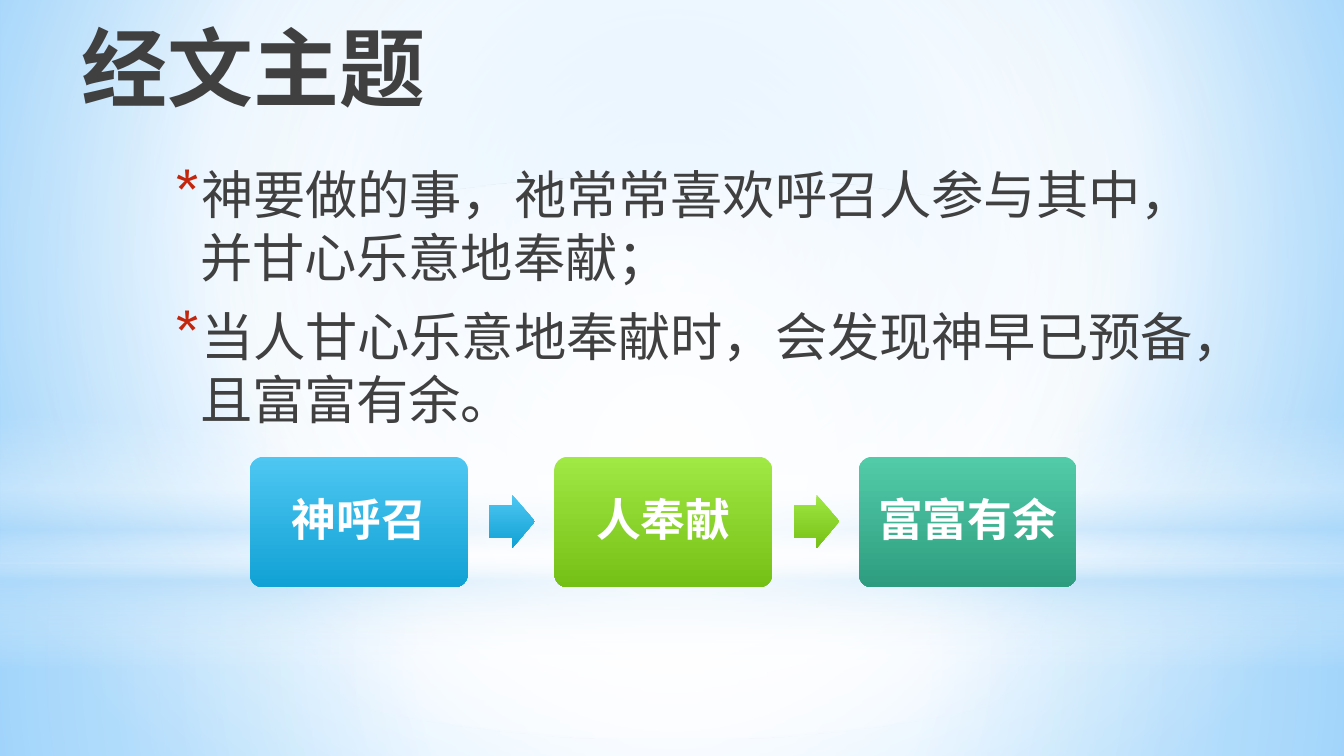
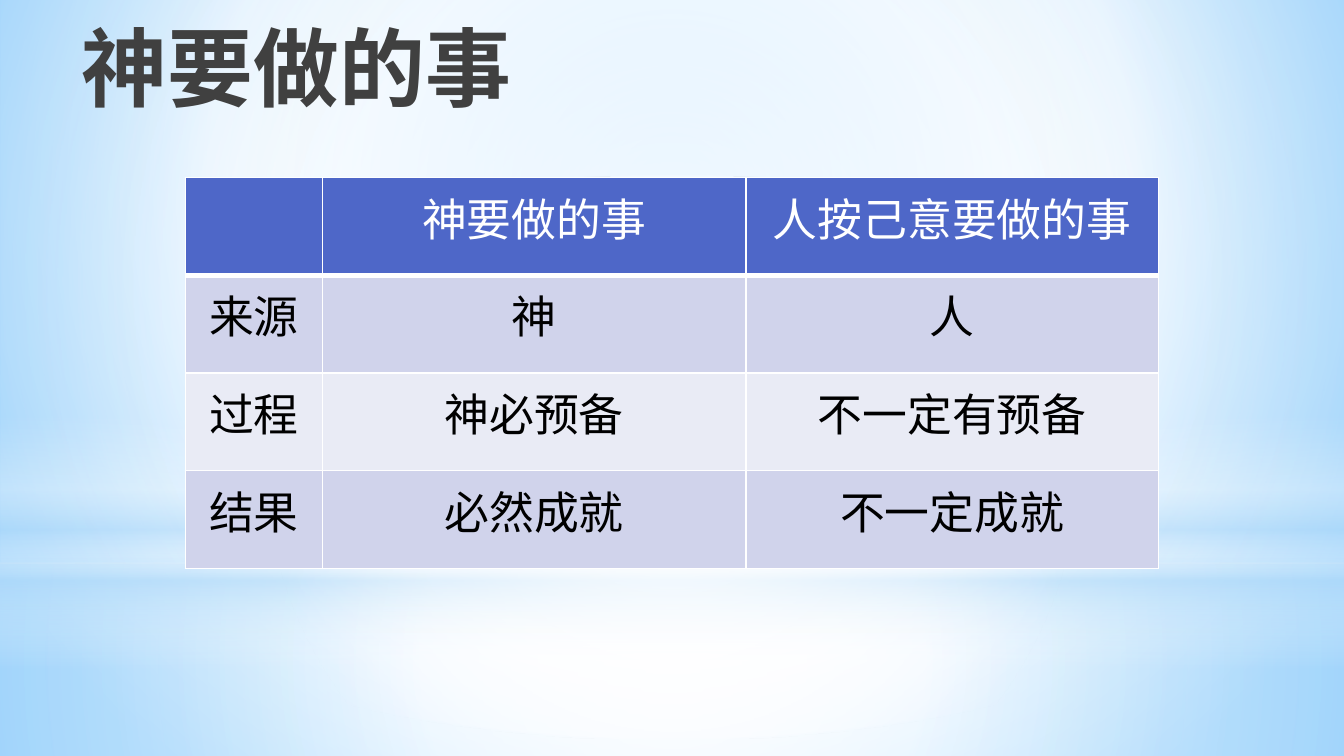
from dataclasses import dataclass

from lxml import etree
from pptx import Presentation
from pptx.dml.color import RGBColor
from pptx.enum.shapes import MSO_SHAPE
from pptx.enum.text import MSO_ANCHOR, PP_ALIGN
from pptx.oxml.ns import qn
from pptx.util import Inches, Pt

RECT, OVAL = MSO_SHAPE.RECTANGLE, MSO_SHAPE.OVAL
ROUND_RECT, RIGHT_ARROW = MSO_SHAPE.ROUNDED_RECTANGLE, MSO_SHAPE.RIGHT_ARROW
MIDDLE = MSO_ANCHOR.MIDDLE
LEFT, CENTER = PP_ALIGN.LEFT, PP_ALIGN.CENTER
CENTRE_FOCUS = (50, 50, 50, 50)


@dataclass(frozen=True)
class Theme:
    heading_font: str = "Karla"
    body_font: str = "Noto Sans CJK SC"
    title_size: int = 46
    body_size: int = 28
    label_size: int = 24
    ink: str = "404040"
    black: str = "000000"
    white: str = "FFFFFF"
    haze: str = "B4DCFA"
    bullet: str = "C3260C"
    backdrop: tuple = ((0, "9ED5FF"), (60, "FFFFFF"), (100, "5BB9FF"))
    blue: tuple = ((0, "4EC7F2"), (100, "11A1D4"))
    green: tuple = ((0, "A0E844"), (100, "75C016"))
    teal: tuple = ((0, "52CBA9"), (100, "2E9D7F"))
    header: str = "4E67C8"
    bands: tuple = ("D0D3EB", "E9EBF5")


def sub(parent, tag, **attrs):
    return etree.SubElement(parent, qn(tag), {k: str(v) for k, v in attrs.items()})


def set_gradient(fill, parent, stops, focus=None):
    fill.solid()
    fill.fore_color.rgb = RGBColor.from_string(stops[0][1])
    solid = parent.find(qn("a:solidFill"))
    grad = etree.Element(qn("a:gradFill"), rotWithShape="1")
    gs_list = sub(grad, "a:gsLst")
    for pos, color, *alpha in stops:
        clr = sub(sub(gs_list, "a:gs", pos=pos * 1000), "a:srgbClr", val=color)
        if alpha:
            sub(clr, "a:alpha", val=alpha[0] * 1000)
    if focus:
        sides = {k: v * 1000 for k, v in zip("ltrb", focus)}
        sub(sub(grad, "a:path", path="circle"), "a:fillToRect", **sides)
    else:
        sub(grad, "a:lin", ang=5400000, scaled=0)
    parent.replace(solid, grad)


class Deck:
    def __init__(self, theme):
        self.t = theme
        self.prs = Presentation()
        self.prs.slide_width = Inches(10)
        self.prs.slide_height = Inches(10 * 9 / 16)
        self.s = None

    def slide(self, title, title_width):
        t = self.t
        self.s = self.prs.slides.add_slide(self.prs.slide_layouts[6])
        fill = self.s.background.fill
        fill.solid()
        bg = self.s.element.find(".//" + qn("p:bgPr"))
        set_gradient(fill, bg, t.backdrop, (20, 10, 20, 60))
        w, haze = t.white, t.haze
        glow = ((0, w, 0), (29, w, 30), (45, haze, 40), (55, w, 26),
                (65, haze, 60), (100, w, 0))
        layers = (
            (RECT, 4.19, 1.44, ((0, w, 91), (37, w, 76), (100, haze, 79)), CENTRE_FOCUS),
            (RECT, 0, 4.19, ((0, w, 89), (48, w, 62), (100, haze, 79)), CENTRE_FOCUS),
            (RECT, 3.09, 1.88, glow, None),
            (OVAL, 1.31, 4.19, ((0, w), (56, w, 0)), CENTRE_FOCUS),
        )
        for kind, top, height, stops, focus in layers:
            self.shape(kind, 0, top, 10, height, stops, focus)
        self.text(0.51, 0.06, title_width, 0.94, [title],
                  size=t.title_size, font=t.heading_font, bold=True)

    def shape(self, kind, x, y, w, h, stops, focus=None, adj=()):
        sp = self.s.shapes.add_shape(kind, Inches(x), Inches(y), Inches(w), Inches(h))
        sp.shadow.inherit = False
        sp.line.fill.background()
        set_gradient(sp.fill, sp.element.spPr, stops, focus)
        for i, value in enumerate(adj):
            sp.adjustments[i] = value
        return sp

    def style(self, p, size, color=None, font=None, bold=False, align=LEFT):
        p.alignment = align
        for r in p.runs:
            r.font.size, r.font.bold = Pt(size), bold
            r.font.color.rgb = RGBColor.from_string(color or self.t.ink)
            r.font.name = font or self.t.body_font
            sub(r.font._element, "a:ea", typeface=self.t.body_font)

    def text(self, x, y, w, h, lines, **style):
        tf = self.s.shapes.add_textbox(
            Inches(x), Inches(y), Inches(w), Inches(h)).text_frame
        tf.word_wrap = True
        tf.text = "\n".join(lines)
        for p in tf.paragraphs:
            self.style(p, **style)
        return tf

    def bullets(self, x, y, w, h, lines):
        tf = self.text(x, y, w, h, lines, size=self.t.body_size)
        for p in tf.paragraphs:
            p.space_before, p.space_after = Pt(5.6), Pt(3)
            pPr = p._p.get_or_add_pPr()
            pPr.set("marL", str(Inches(0.25)))
            pPr.set("indent", str(Inches(-0.2)))
            sub(sub(pPr, "a:buClr"), "a:srgbClr", val=self.t.bullet)
            sub(pPr, "a:buSzPct", val=130000)
            sub(pPr, "a:buFont", typeface=self.t.heading_font)
            sub(pPr, "a:buChar", char="*")

    def process(self, first_x, last_x, y, steps):
        pitch = (last_x - first_x) / (len(steps) - 1)
        for i, (label, stops) in enumerate(steps):
            left = first_x + i * pitch
            sp = self.shape(ROUND_RECT, left, y, 1.62, 0.97, stops, adj=(0.1,))
            tf = sp.text_frame
            tf.word_wrap = True
            tf.vertical_anchor = MIDDLE
            tf.margin_left = tf.margin_right = Inches(0.1)
            tf.margin_top = tf.margin_bottom = Inches(0.1)
            tf.text = label
            p = tf.paragraphs[0]
            p.line_spacing = 0.9
            self.style(p, self.t.label_size, self.t.white,
                       self.t.heading_font, True, CENTER)
            if i < len(steps) - 1:
                self.shape(RIGHT_ARROW, left + 1.78, y + 0.28, 0.34, 0.4,
                           stops, adj=(0.6, 0.5))

    def borders(self, cell, top, bottom):
        tcPr = cell._tc.get_or_add_tcPr()
        for i, (side, width) in enumerate(zip("LRTB", (1, 1, top, bottom))):
            ln = sub(tcPr, f"a:ln{side}", w=Pt(width))
            sub(sub(ln, "a:solidFill"), "a:srgbClr", val=self.t.white)
            tcPr.insert(i, ln)

    def table(self, x, y, widths, height, rows):
        t = self.t
        tbl = self.s.shapes.add_table(
            len(rows), len(widths), Inches(x), Inches(y),
            Inches(sum(widths)), Inches(height)).table
        for col, width in zip(tbl.columns, widths):
            col.width = Inches(width)
        for i, row in enumerate(rows):
            for j, value in enumerate(row):
                cell = tbl.cell(i, j)
                cell.text = value
                cell.fill.solid()
                cell.fill.fore_color.rgb = RGBColor.from_string(
                    t.bands[(i - 1) % 2] if i else t.header)
                self.borders(cell, 3 if i == 1 else 1, 1 if i else 3)
                self.style(cell.text_frame.paragraphs[0], t.label_size,
                           t.black if i else t.white, align=CENTER)


def main():
    theme = Theme()
    deck = Deck(theme)

    deck.slide("经文主题", 8.27)
    deck.bullets(1.14, 1.16, 8.03, 2.85, [
        "神要做的事，祂常常喜欢呼召人参与其中，并甘心乐意地奉献；",
        "当人甘心乐意地奉献时，会发现神早已预备，且富富有余。",
    ])
    deck.process(1.86, 6.39, 3.4, [
        ("神呼召", theme.blue),
        ("人奉献", theme.green),
        ("富富有余", theme.teal),
    ])

    deck.slide("神要做的事", 7.12)
    deck.table(1.38, 1.32, (1.02, 3.15, 3.07), 2.91, [
        ("", "神要做的事", "人按己意要做的事"),
        ("来源", "神", "人"),
        ("过程", "神必预备", "不一定有预备"),
        ("结果", "必然成就", "不一定成就"),
    ])

    deck.prs.save("out.pptx")


if __name__ == "__main__":
    main()
